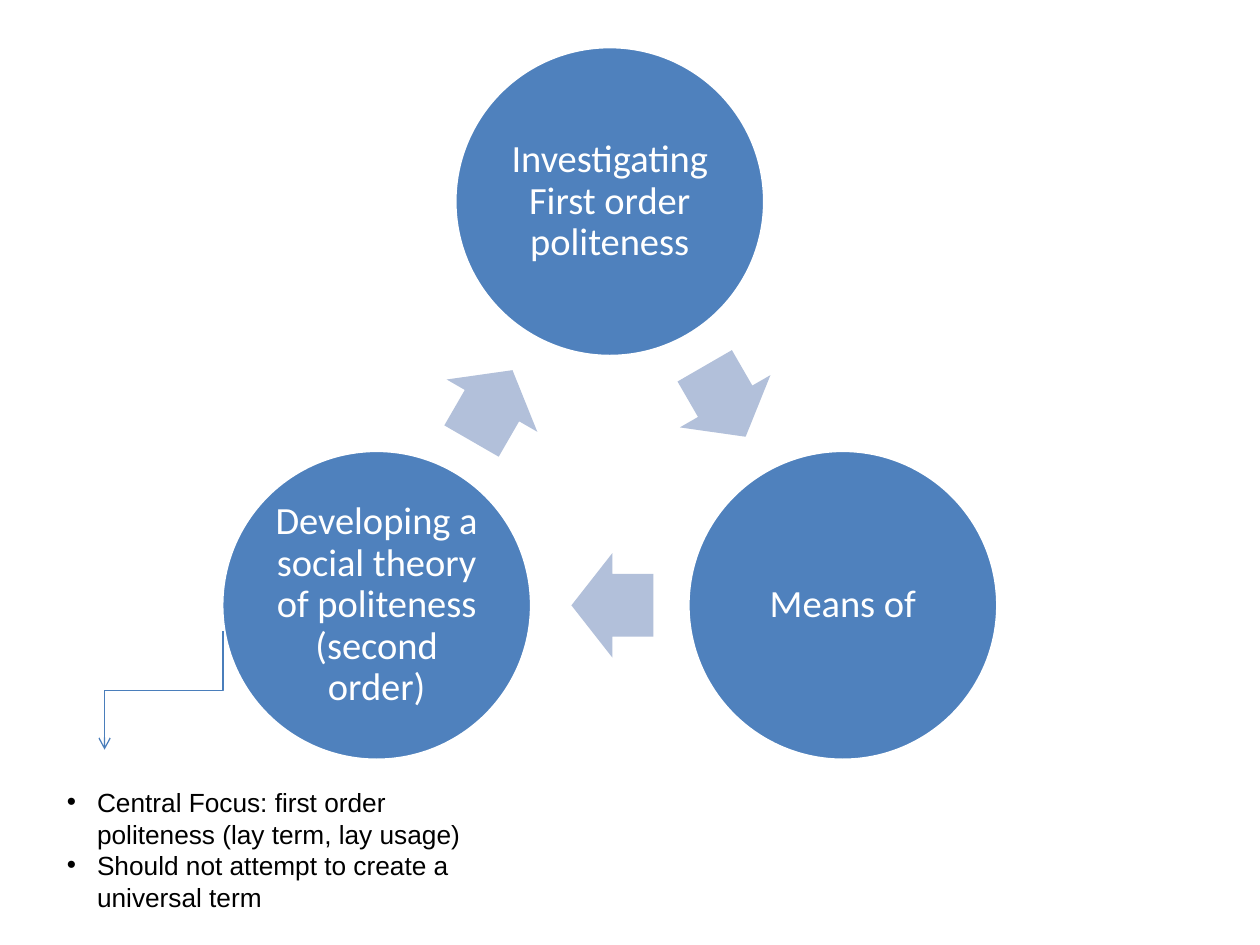
import math
from dataclasses import dataclass

import lxml.etree
import pptx
import pptx.dml.color
import pptx.enum.shapes
import pptx.enum.text
import pptx.oxml.ns
import pptx.util

Inches = pptx.util.Inches
Pt = pptx.util.Pt
RGB = pptx.dml.color.RGBColor.from_string
SHAPE = pptx.enum.shapes.MSO_SHAPE
PP_ALIGN = pptx.enum.text.PP_ALIGN
ANCHOR = pptx.enum.text.MSO_ANCHOR
qn = pptx.oxml.ns.qn


@dataclass(frozen=True)
class Theme:
    node: str = "4F81BD"
    arrow: str = "B2C0DA"
    connector: str = "4A7EBB"
    light: str = "FFFFFF"
    dark: str = "000000"
    node_font: str = "Calibri"
    note_font: str = "Arial"
    node_size: float = 22
    note_size: float = 15


THEME = Theme()
STEPS = [
    "Investigating First order politeness",
    "Means of",
    "Developing a social theory of politeness (second order)",
]
NOTES = [
    "Central Focus: first order politeness (lay term, lay usage)",
    "Should not attempt to create a universal term",
]


def write(p, text, font, size, color, align=PP_ALIGN.LEFT, spacing=1.0):
    p.alignment = align
    p.line_spacing = spacing
    p.space_before = p.space_after = Pt(0)
    r = p.add_run()
    r.text = text
    r.font.name = font
    r.font.size = Pt(size)
    r.font.color.rgb = RGB(color)


def set_insets(tf, x, y):
    tf.margin_left = tf.margin_right = Inches(x)
    tf.margin_top = tf.margin_bottom = Inches(y)


def add_centred(s, kind, cx, cy, width, height, fill):
    sp = s.shapes.add_shape(kind, Inches(cx - width / 2), Inches(cy - height / 2),
                            Inches(width), Inches(height))
    sp.shadow.inherit = False
    sp.fill.solid()
    sp.fill.fore_color.rgb = RGB(fill)
    sp.line.fill.background()
    return sp


def add_node(s, cx, cy, size, text):
    sp = add_centred(s, SHAPE.OVAL, cx, cy, size, size, THEME.node)
    sp.line.color.rgb = RGB(THEME.light)
    sp.line.width = Pt(2)
    tf = sp.text_frame
    tf.word_wrap = True
    tf.vertical_anchor = ANCHOR.MIDDLE
    set_insets(tf, 0.03, 0.03)
    write(tf.paragraphs[0], text, THEME.node_font, THEME.node_size,
          THEME.light, PP_ALIGN.CENTER, 0.9)


def add_cycle(s, left, top, width, height, steps):
    node = 2.46
    setback = 0.02
    turn = 360 / len(steps)
    radius = (width - node) / 2 / math.sin(math.radians(turn))
    cx, cy = left + width / 2, top + node / 2 + radius
    centres = [(cx + radius * math.sin(math.radians(i * turn)),
                cy - radius * math.cos(math.radians(i * turn)))
               for i in range(len(steps))]
    for i, (text, (x, y)) in enumerate(zip(steps, centres)):
        add_node(s, x, y, node, text)
        nx, ny = centres[(i + 1) % len(centres)]
        angle = math.atan2(ny - y, nx - x)
        sp = add_centred(s, SHAPE.RIGHT_ARROW,
                         (x + nx) / 2 - setback * math.cos(angle),
                         (y + ny) / 2 - setback * math.sin(angle),
                         0.65, 0.83, THEME.arrow)
        sp.adjustments[0] = 0.6
        sp.adjustments[1] = 0.5
        sp.rotation = round(math.degrees(angle)) % 360


def add_elbow(s, left, top, size):
    cxn = s.shapes.add_connector(pptx.enum.shapes.MSO_CONNECTOR.ELBOW,
                                 Inches(left), Inches(top),
                                 Inches(left + size), Inches(top + size))
    cxn.line.color.rgb = RGB(THEME.connector)
    cxn.line.width = Pt(0.75)
    sp_pr = cxn._element.spPr
    sp_pr.find(qn("a:xfrm")).set("rot", str(90 * 60000))
    lxml.etree.SubElement(sp_pr.find(qn("a:ln")), qn("a:tailEnd"), type="arrow")
    lxml.etree.SubElement(sp_pr, qn("a:effectLst"))


def add_notes(s, left, top, width, height, notes):
    sp = s.placeholders[1]
    sp.left, sp.top = Inches(left), Inches(top)
    sp.width, sp.height = Inches(width), Inches(height)
    tf = sp.text_frame
    tf.word_wrap = True
    tf.auto_size = pptx.enum.text.MSO_AUTO_SIZE.NONE
    tf.vertical_anchor = ANCHOR.TOP
    set_insets(tf, 0.1, 0.05)
    for i, text in enumerate(notes):
        p = tf.add_paragraph() if i else tf.paragraphs[0]
        write(p, text, THEME.note_font, THEME.note_size, THEME.dark)
        p_pr = p._p.get_or_add_pPr()
        p_pr.set("marL", str(Inches(0.24)))
        p_pr.set("indent", str(-Inches(0.24)))
        lxml.etree.SubElement(p_pr, qn("a:buFont"), typeface="Arial")
        lxml.etree.SubElement(p_pr, qn("a:buChar"), char="•")


def main():
    prs = pptx.Presentation()
    prs.slide_width, prs.slide_height = Inches(10), Inches(7.5)
    s = prs.slides.add_slide(prs.slide_layouts[1])
    title = s.shapes.title._element
    title.getparent().remove(title)
    add_cycle(s, 1.76, 0.37, 6.16, 5.66, STEPS)
    add_elbow(s, 0.83, 5.01, 0.94)
    add_notes(s, 0.43, 6.19, 3.7, 1.1, NOTES)
    prs.save("out.pptx")


if __name__ == "__main__":
    main()
